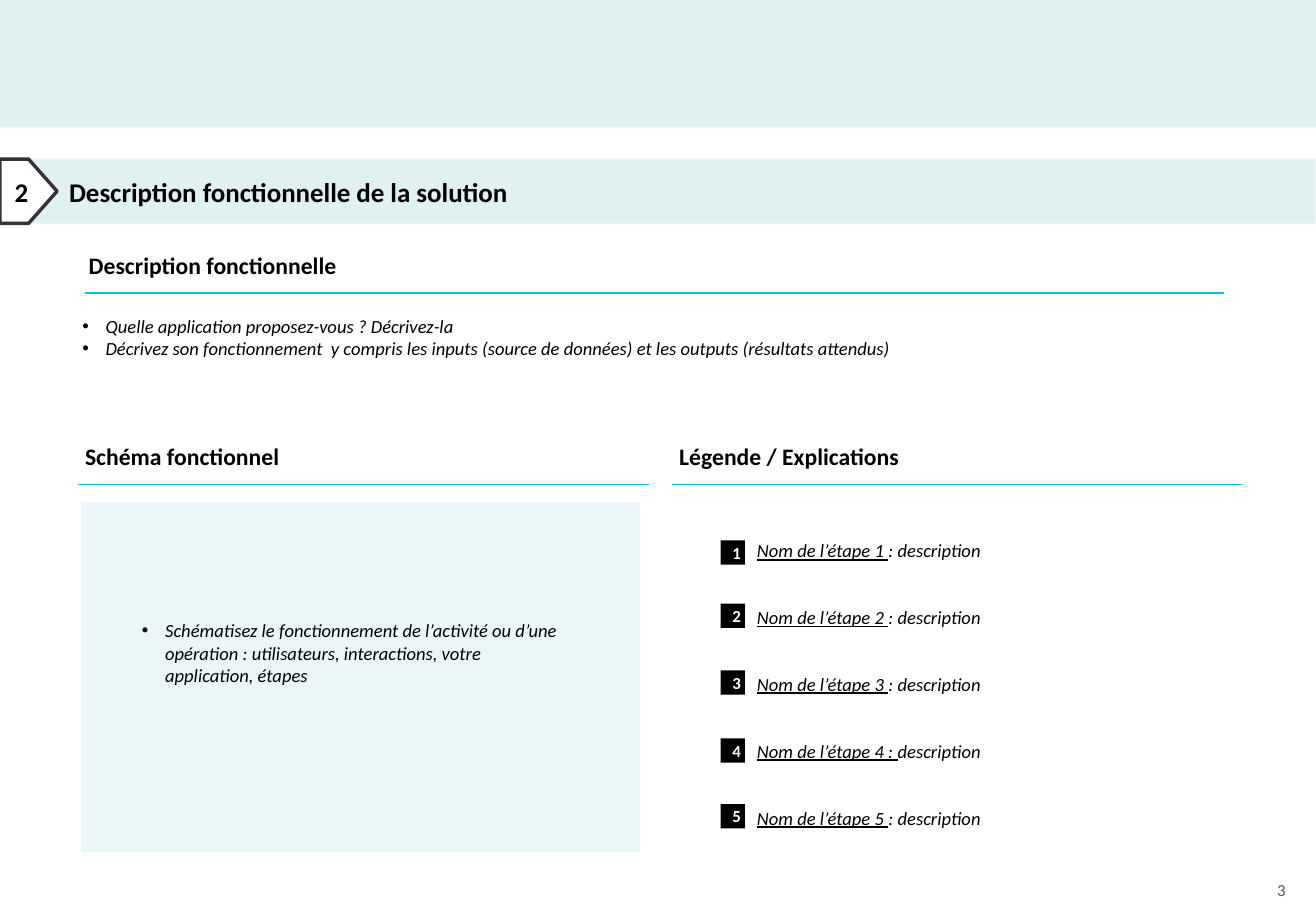
"""Build the functional description slide of the solution deck."""
from dataclasses import dataclass
from typing import Optional

from lxml import etree
from pptx import Presentation
from pptx import util as u
from pptx.dml.color import RGBColor
from pptx.enum import shapes, text
from pptx.oxml.ns import qn

EMU_PER_PX = 9144
FONT = "Calibri"
BLACK = RGBColor(0x00, 0x00, 0x00)
WHITE = RGBColor(0xFF, 0xFF, 0xFF)
MINT = RGBColor(0xDF, 0xF2, 0xEF)
ICE = RGBColor(0xEB, 0xF6, 0xF9)
CYAN = RGBColor(0x06, 0xC3, 0xE2)
CHARCOAL = RGBColor(0x33, 0x33, 0x33)
GREY = RGBColor(0x5C, 0x58, 0x51)
RECTANGLE = shapes.MSO_SHAPE.RECTANGLE
CENTER = text.PP_ALIGN.CENTER


@dataclass(frozen=True)
class Area:
    left: int
    top: int
    width: int
    height: int


@dataclass(frozen=True)
class Style:
    size: int
    color: RGBColor = BLACK
    bold: bool = False
    italic: bool = False
    align: Optional[text.PP_ALIGN] = None
    indent: int = 0


@dataclass(frozen=True)
class Panel:
    area: Area
    fill: RGBColor
    line: Optional[RGBColor] = None
    line_width: int = 1
    kind: shapes.MSO_SHAPE = RECTANGLE
    label: str = ""
    style: Optional[Style] = None


@dataclass(frozen=True)
class Heading:
    label: str
    area: Area
    rule_start: int
    rule_end: int
    rule_top: int


@dataclass(frozen=True)
class Step:
    badge_top: int
    name: str
    detail: str = ": description"


TITLE = Style(16, bold=True, indent=48)
CHEVRON = Style(16, bold=True, align=CENTER)
SECTION = Style(14, bold=True)
BADGE = Style(10, WHITE, bold=True, align=CENTER)
BODY = Style(11, italic=True)
PAGE_NUMBER = Style(10, GREY, align=text.PP_ALIGN.RIGHT)
BULLET_INDENT = 19
STEP_GAP = u.Pt(26.4)

TOP_BAND = Panel(Area(0, 0, 1083, 105), MINT)
SCHEMA = Panel(Area(67, 414, 459, 287), ICE, ICE)
TITLE_PANELS = [
    Panel(Area(-1, 131, 1084, 53), MINT, ICE,
          label="Description fonctionnelle de la solution", style=TITLE),
    Panel(Area(0, 131, 47, 53), WHITE, CHARCOAL, 2, shapes.MSO_SHAPE.PENTAGON, "2", CHEVRON),
]
HEADINGS = [
    Heading("Schéma fonctionnel", Area(61, 359, 480, 33), 64, 534, 399),
    Heading("Légende / Explications", Area(550, 359, 480, 33), 553, 1022, 399),
    Heading("Description fonctionnelle", Area(64, 202, 958, 33), 70, 1007, 241),
]
STEPS = [
    Step(445, "Nom de l’étape 1 "),
    Step(497, "Nom de l’étape 2 "),
    Step(552, "Nom de l’étape 3 "),
    Step(608, "Nom de l’étape 4 : ", "description"),
    Step(662, "Nom de l’étape 5 "),
]
SCHEMA_HINTS = [
    "Schématisez le fonctionnement de l’activité ou d’une opération : "
    "utilisateurs, interactions, votre application, étapes",
]
DESCRIPTION_HINTS = [
    "Quelle application proposez-vous ? Décrivez-la",
    "Décrivez son fonctionnement  y compris les inputs (source de données) "
    "et les outputs (résultats attendus)",
]


def px(length: int) -> u.Emu:
    """Turn a length in px into EMU."""
    return u.Emu(length * EMU_PER_PX)


def bounds(area: Area) -> tuple:
    """Return left, top, width and height in EMU."""
    return px(area.left), px(area.top), px(area.width), px(area.height)


def format_para(para, style: Style) -> None:
    """Apply a style to a paragraph and its runs."""
    if style.align is not None:
        para.alignment = style.align
    if style.indent:
        para._p.get_or_add_pPr().set("marL", str(px(style.indent)))
    for span in para.runs:
        span.font.name = FONT
        span.font.size = u.Pt(style.size)
        span.font.bold = style.bold
        span.font.italic = style.italic
        span.font.color.rgb = style.color


def add_bullet(para) -> None:
    """Give a paragraph a hanging round bullet."""
    props = para._p.get_or_add_pPr()
    props.set("marL", str(px(BULLET_INDENT)))
    props.set("indent", str(px(-BULLET_INDENT)))
    etree.SubElement(props, qn("a:buFont")).set("typeface", "Arial")
    etree.SubElement(props, qn("a:buChar")).set("char", "•")


def add_panel(page, panel: Panel) -> None:
    """Draw a filled shape with an optional outline and label."""
    shape = page.shapes.add_shape(panel.kind, *bounds(panel.area))
    shape.shadow.inherit = False
    shape.fill.solid()
    shape.fill.fore_color.rgb = panel.fill
    if panel.line is None:
        shape.line.fill.background()
    else:
        shape.line.color.rgb = panel.line
        shape.line.width = u.Pt(panel.line_width)
    if panel.style is not None:
        frame = shape.text_frame
        frame.text = panel.label
        frame.vertical_anchor = text.MSO_ANCHOR.MIDDLE
        para = frame.paragraphs[0]
        para.alignment = text.PP_ALIGN.LEFT
        format_para(para, panel.style)


def add_text(page, area: Area, lines: list[str], style: Style,
             bulleted: bool = False, side_inset: int = 10):
    """Add a wrapping text box and return its frame."""
    frame = page.shapes.add_textbox(*bounds(area)).text_frame
    frame.word_wrap = True
    frame.margin_left = frame.margin_right = px(side_inset)
    frame.text = "\n".join(lines)
    for para in frame.paragraphs:
        if bulleted:
            add_bullet(para)
        format_para(para, style)
    return frame


def add_heading(page, heading: Heading) -> None:
    """Add a section heading with its rule."""
    add_text(page, heading.area, [heading.label], SECTION, side_inset=9)
    rule = page.shapes.add_connector(
        shapes.MSO_CONNECTOR.STRAIGHT, px(heading.rule_start), px(heading.rule_top),
        px(heading.rule_end), px(heading.rule_top))
    rule.line.color.rgb = CYAN
    rule.line.width = u.Pt(1)
    etree.SubElement(rule._element.spPr, qn("a:effectLst"))


def add_steps(page, steps: list[Step]) -> None:
    """Add the numbered badges and the step descriptions."""
    for number, step in enumerate(steps, 1):
        add_panel(page, Panel(Area(593, step.badge_top, 20, 20), BLACK,
                              label=str(number), style=BADGE))
    frame = add_text(page, Area(613, 439, 409, 259), [step.name for step in steps], BODY)
    for index, (para, step) in enumerate(zip(frame.paragraphs, steps)):
        para.runs[0].font.underline = True
        para.add_run().text = step.detail
        format_para(para, BODY)
        if index:
            para.space_before = STEP_GAP


def main() -> None:
    """Build and save the deck."""
    deck = Presentation()
    deck.slide_width, deck.slide_height = px(1083), px(750)
    page = deck.slides.add_slide(deck.slide_layouts[6])
    add_panel(page, TOP_BAND)
    add_text(page, Area(691, 719, 367, 27), ["3"], PAGE_NUMBER, side_inset=0)
    for heading in HEADINGS:
        add_heading(page, heading)
    add_steps(page, STEPS)
    add_panel(page, SCHEMA)
    add_text(page, Area(107, 505, 371, 125), SCHEMA_HINTS, BODY, bulleted=True)
    for panel in TITLE_PANELS:
        add_panel(page, panel)
    add_text(page, Area(58, 254, 958, 58), DESCRIPTION_HINTS, BODY, bulleted=True)
    deck.save("out.pptx")


if __name__ == "__main__":
    main()
